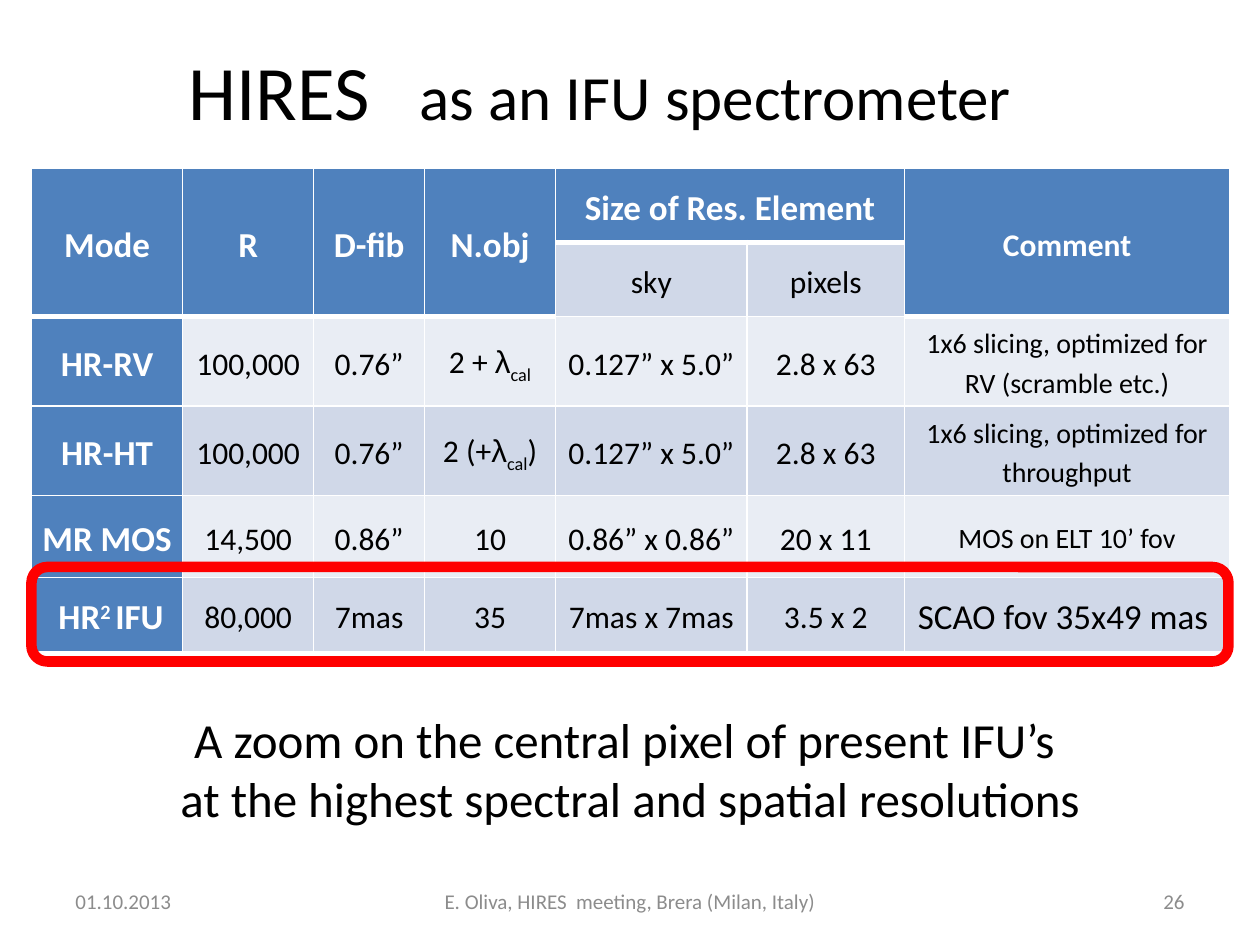
from typing import NamedTuple
from lxml.etree import SubElement as Sub
from pptx import Presentation as Deck
from pptx.dml.color import RGBColor as Rgb
from pptx.enum.shapes import MSO_SHAPE as Kind
from pptx.enum.text import MSO_ANCHOR as Anchor, PP_ALIGN as Align
from pptx.oxml.ns import qn
from pptx.util import Inches, Pt

UNIT = Inches(1) // 12  # the slide is a grid of 120 columns by 90 rows
BLUE, PALE, LIGHT = "4F81BD", "D0D8E8", "E9EDF4"
WHITE, BLACK, GREY, RED = "FFFFFF", "000000", "8C8C8C", "FF0000"


class Box(NamedTuple):
    col: float
    row: float
    wide: float
    high: float


class Run(NamedTuple):
    text: str
    size: float = 18
    color: str = BLACK
    bold: bool = False
    italic: bool = False
    shift: int = 0  # baseline, percent
    face: str = "Calibri"


class Note(NamedTuple):
    box: Box
    lines: list[list[Run]]
    align: Align = Align.CENTER
    anchor: Anchor = Anchor.MIDDLE


def rgb(code: str) -> Rgb:
    return Rgb.from_string(code)


def put(item, vals: dict) -> None:
    for name, val in vals.items():
        setattr(item, name, val)


def place(box: Box) -> list[int]:
    return [round(n * UNIT) for n in box]


def write(frame, lines: list[list[Run]], align=Align.CENTER, lead=None) -> None:
    for i, line in enumerate(lines):
        para = frame.add_paragraph() if i else frame.paragraphs[0]
        put(para, {"alignment": align, "line_spacing": lead})
        for part in line:
            run = para.add_run()
            run.text = part.text
            put(run.font, {"name": part.face, "size": Pt(part.size),
                           "bold": part.bold, "italic": part.italic})
            run.font.color.rgb = rgb(part.color)
            if part.shift:
                run._r.get_or_add_rPr().set("baseline", str(part.shift * 1000))


def draw(slide, note: Note) -> None:
    frame = slide.shapes.add_textbox(*place(note.box)).text_frame
    put(frame, {"word_wrap": True, "vertical_anchor": note.anchor})
    write(frame, note.lines, note.align)


# Table content: a plain string takes the style of its column
def head(text: str, size: float = 20) -> list[Run]:
    return [Run(text, size, WHITE, True)]


def count(lead: str, tail: str = "") -> list[Run]:
    runs = [Run(lead), Run("λ", face="Arial"), Run("cal", shift=-25)]
    return runs + [Run(tail)] if tail else runs


COLS = [1.2, 1.04, 0.88, 1.04, 1.52, 1.25, 2.58]
ROWS = [0.59, 0.59, 0.71, 0.71, 0.65, 0.59]
LAST = len(COLS) - 1
RES = (4, 5)  # columns under the shared heading
CELLS = [
    ["Mode", "R", "D-fib", "N.obj", "Size of Res. Element", None,
     head("Comment", 18)],
    [None, None, None, None, "sky", "pixels", None],
    ["HR-RV", "100,000", "0.76”", count("2 + "), "0.127” x 5.0”", "2.8 x 63",
     "1x6 slicing, optimized for RV (scramble etc.)"],
    ["HR-HT", "100,000", "0.76”", count("2 (+", ")"), "0.127” x 5.0”",
     "2.8 x 63", "1x6 slicing, optimized for throughput"],
    ["MR MOS", "14,500", "0.86”", "10", "0.86” x 0.86”", "20 x 11",
     "MOS on ELT 10’ fov"],
    [[Run(" HR", 20, WHITE, True), Run("2 ", 20, WHITE, True, shift=30),
      Run("IFU", 20, WHITE, True)],
     "80,000", "7mas", "35", "7mas x 7mas", "3.5 x 2",
     [Run("SCAO fov 35x49 mas ", 20)]],
]


def is_head(r: int, c: int) -> bool:
    return r == 0 or (r == 1 and c not in RES)


def border(cell, r: int, c: int) -> None:
    below = 3 if is_head(r, c) else 1
    above = 3 if r and is_head(r - 1, c) else 1
    prop = cell._tc.get_or_add_tcPr()
    for tag, width in {"lnL": 1, "lnR": 1, "lnT": above, "lnB": below}.items():
        line = Sub(prop, qn(f"a:{tag}"), w=str(Pt(width)))
        Sub(Sub(line, qn("a:solidFill")), qn("a:srgbClr"), val=WHITE)


def grid(slide, box: Box) -> None:
    table = slide.shapes.add_table(len(ROWS), len(COLS), *place(box)).table
    for col, wide in zip(table.columns, COLS):
        col.width = Inches(wide)
    for row, high in zip(table.rows, ROWS):
        row.height = Inches(high)
    for c in range(len(COLS)):
        if c not in RES:
            table.cell(0, c).merge(table.cell(1, c))
    table.cell(0, RES[0]).merge(table.cell(0, RES[1]))

    for r, row in enumerate(CELLS):
        for c, text in enumerate(row):
            cell = table.cell(r, c)
            put(cell, {"margin_left": Inches(0.07), "margin_right": Inches(0.07),
                       "margin_top": 0, "margin_bottom": 0,
                       "vertical_anchor": Anchor.MIDDLE})
            border(cell, r, c)
            dark = is_head(r, c) or c == 0
            cell.fill.solid()
            cell.fill.fore_color.rgb = rgb(BLUE if dark else PALE if r % 2 else LIGHT)
            if text is None:
                continue
            if isinstance(text, str):
                text = head(text) if dark else [Run(text, 16 if c == LAST else 18)]
            write(cell.text_frame, [text], lead=1.15)


def ring(slide, box: Box) -> None:
    shape = slide.shapes.add_shape(Kind.ROUNDED_RECTANGLE, *place(box))
    shape.shadow.inherit = False
    shape.fill.background()
    shape.line.color.rgb = rgb(RED)
    shape.line.width = Pt(6)


NOTES = [
    Note(Box(6, 83.4, 28, 4.8), [[Run("01.10.2013", 12, GREY)]], Align.LEFT),
    Note(Box(41, 83.4, 38, 4.8),
         [[Run("E. Oliva, HIRES  meeting, Brera (Milan, Italy)", 12, GREY)]]),
    Note(Box(86, 83.4, 28, 4.8), [[Run("26", 12, GREY)]], Align.RIGHT),
    Note(Box(3, 67, 114, 12.5),
         [[Run("A zoom on the central pixel of present IFU’s ", 28)],
          [Run("at the highest spectral and spatial resolutions", 28)]],
         anchor=Anchor.TOP),
]


def main() -> None:
    deck = Deck()
    put(deck, {"slide_width": 120 * UNIT, "slide_height": 90 * UNIT})
    slide = deck.slides.add_slide(deck.slide_layouts[5])

    # Title
    title = slide.shapes.title
    put(title, dict(zip(("left", "top", "width", "height"),
                        place(Box(6, 0, 105, 17)))))
    title.text_frame.vertical_anchor = Anchor.MIDDLE
    write(title.text_frame, [[Run("HIRES  ", 44), Run(" ", 36, italic=True),
                              Run("as an IFU spectrometer  ", 36)]])

    # Table with its last row ringed
    grid(slide, Box(3, 16, 114, 46))
    ring(slide, Box(3, 54, 114, 9))

    # Closing statement and footer
    for note in NOTES:
        draw(slide, note)
    deck.save("out.pptx")


if __name__ == "__main__":
    main()
